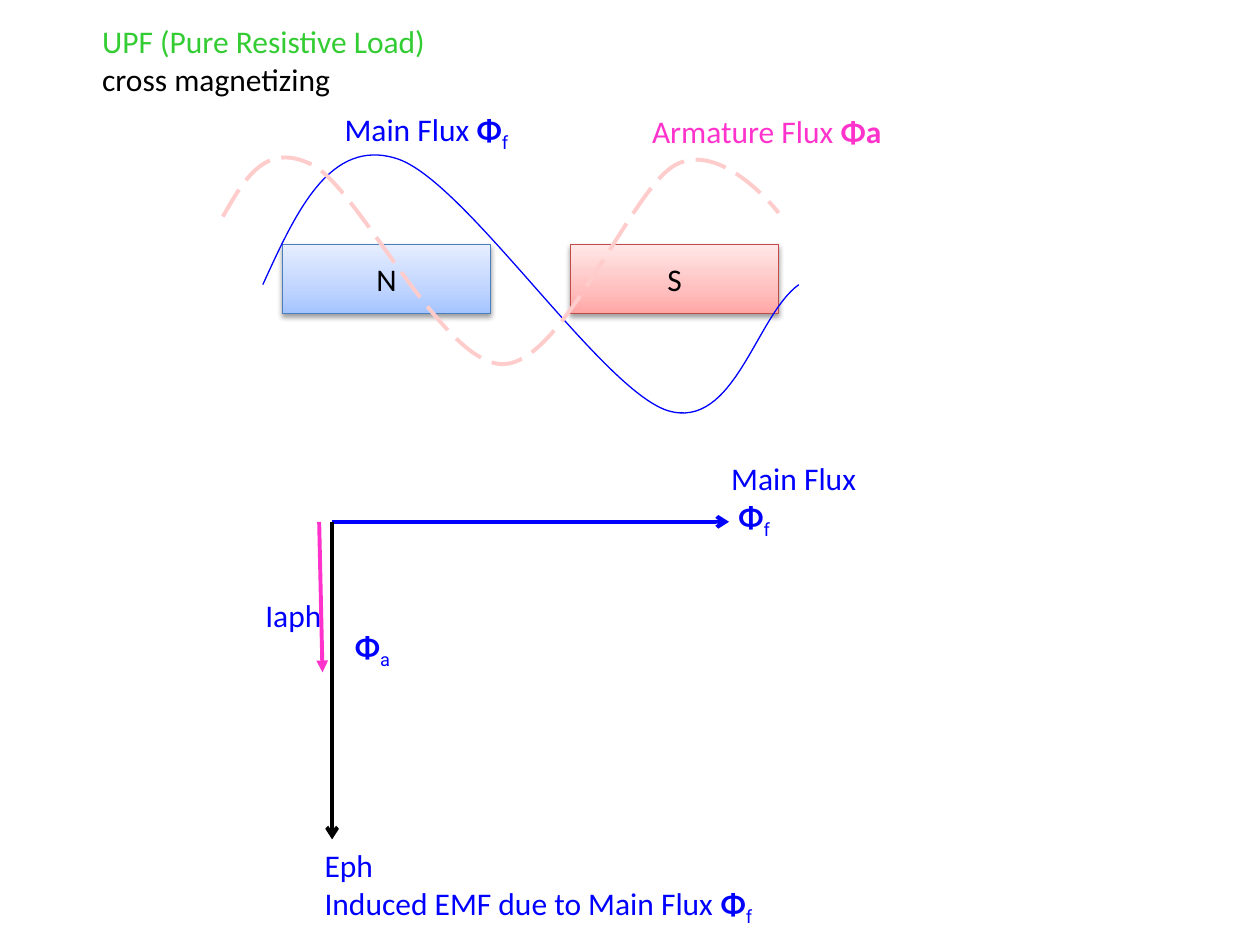
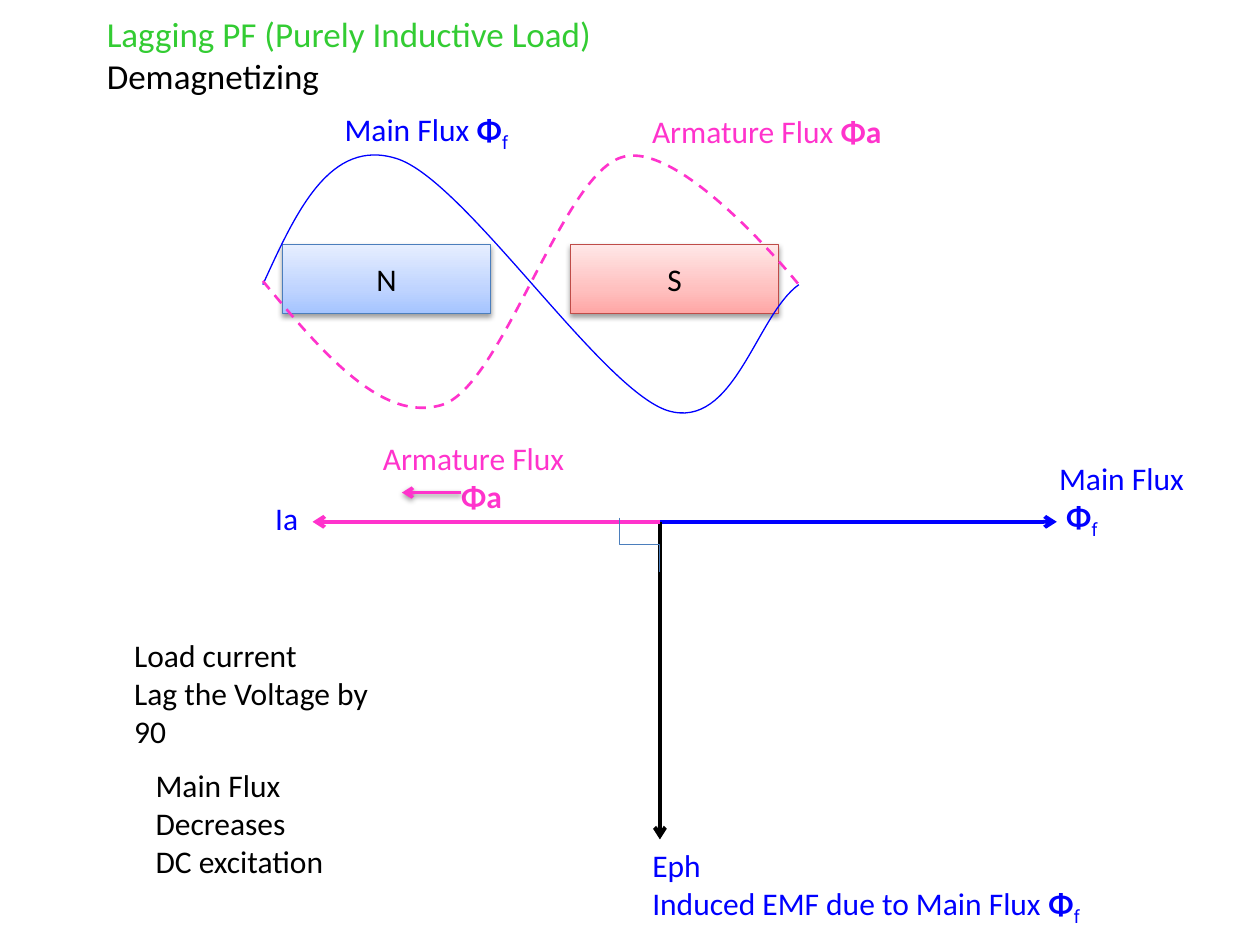
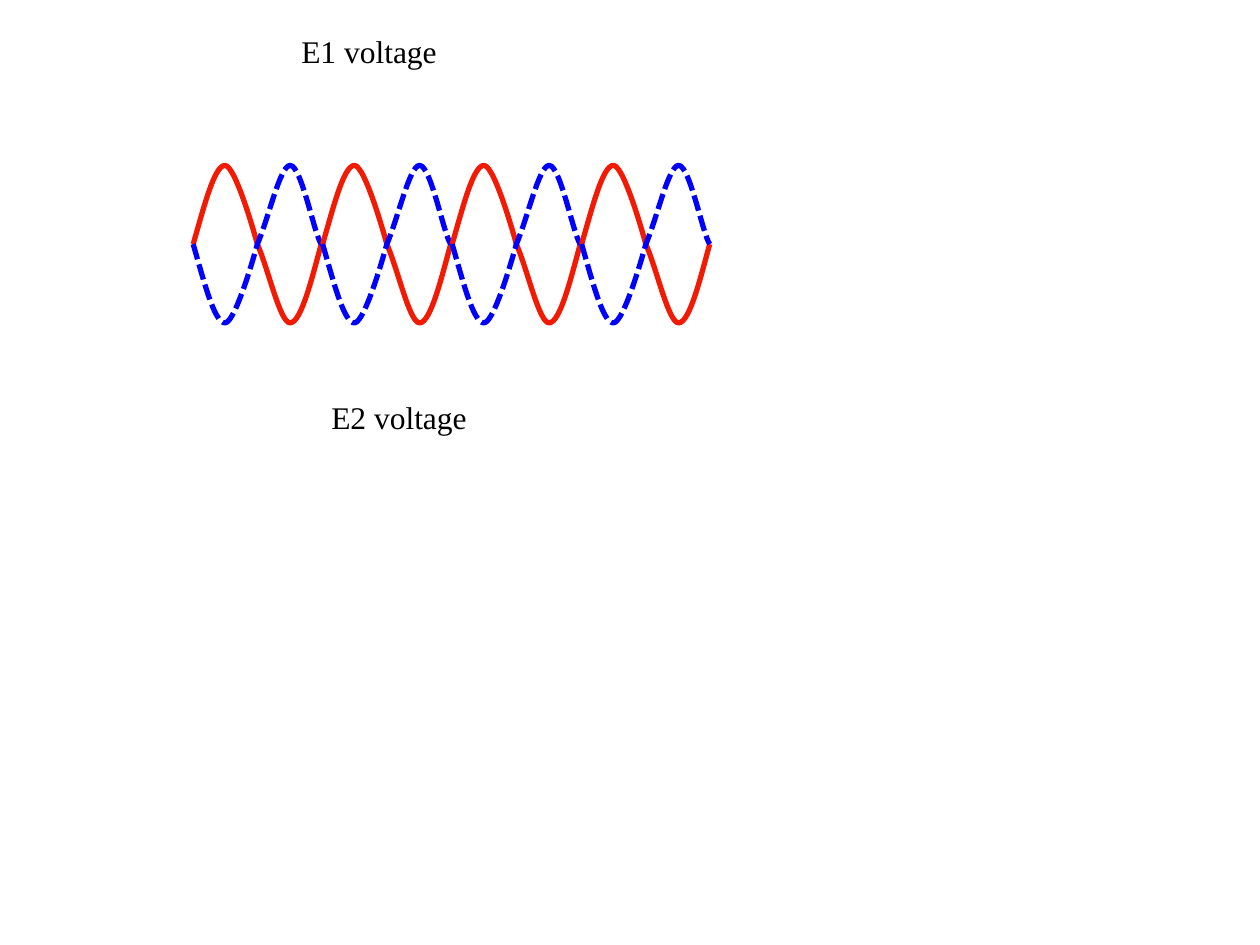
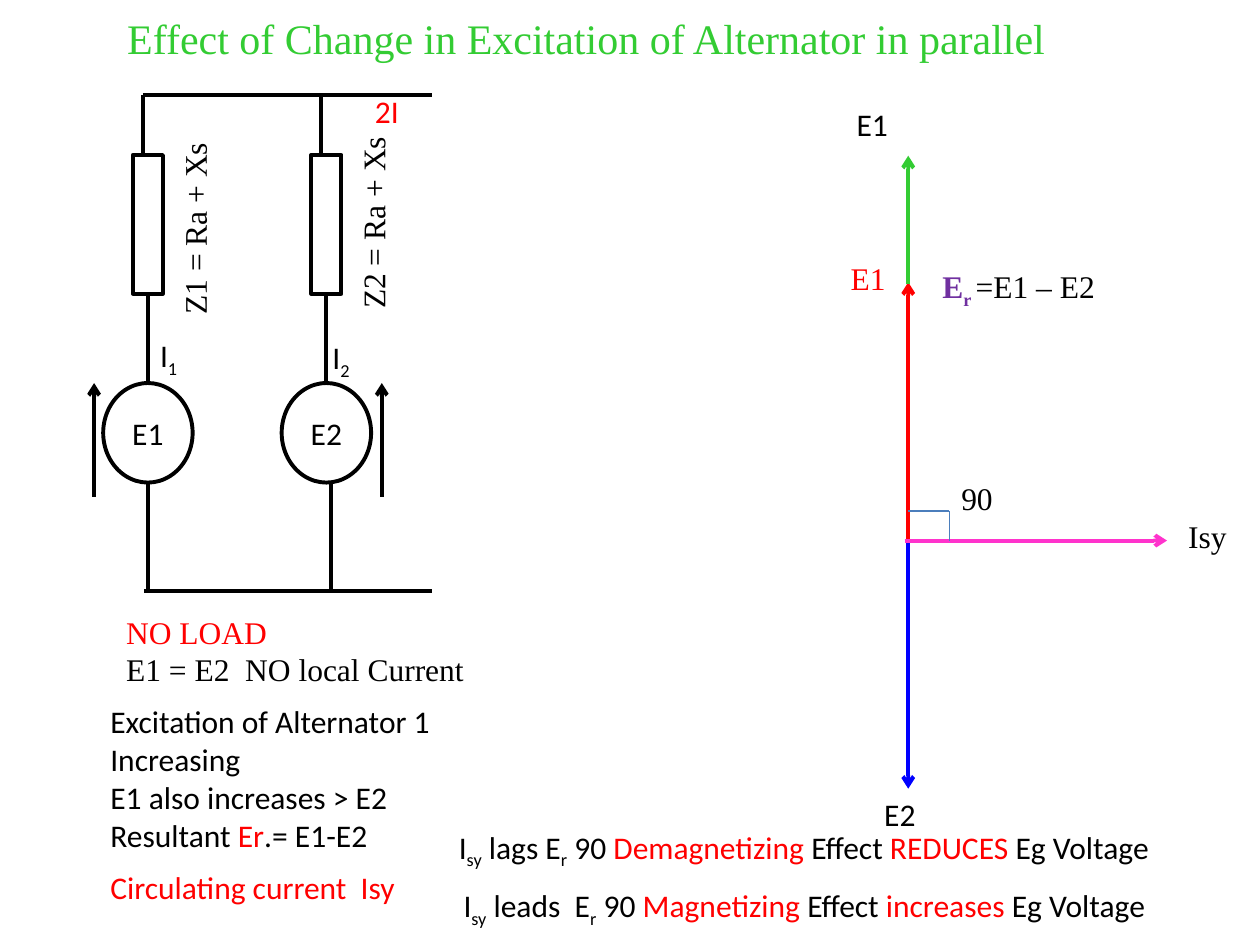
from copy import deepcopy

from lxml import etree
from pptx import Presentation
from pptx.dml.color import RGBColor
from pptx.enum.dml import MSO_LINE
from pptx.enum.shapes import MSO_CONNECTOR, MSO_SHAPE
from pptx.enum.text import MSO_ANCHOR, MSO_AUTO_SIZE, PP_ALIGN
from pptx.oxml.ns import qn
from pptx.util import Pt

STRAIGHT, ELBOW = MSO_CONNECTOR.STRAIGHT, MSO_CONNECTOR.ELBOW
RECTANGLE, CIRCLE = MSO_SHAPE.RECTANGLE, MSO_SHAPE.FLOWCHART_CONNECTOR
DASH, LONG_DASH, SHORT_DASH = MSO_LINE.DASH, MSO_LINE.LONG_DASH, MSO_LINE.SQUARE_DOT
LEFT, CENTER = PP_ALIGN.LEFT, PP_ALIGN.CENTER
TOP, MIDDLE = MSO_ANCHOR.TOP, MSO_ANCHOR.MIDDLE
GROW = MSO_AUTO_SIZE.SHAPE_TO_FIT_TEXT
TITLE_ONLY, BLANK = 5, 6
TOP_SIDE, BOTTOM_SIDE = 0, 2

BLACK = RGBColor(0x00, 0x00, 0x00)
WHITE = RGBColor(0xFF, 0xFF, 0xFF)
BLUE = RGBColor(0x00, 0x00, 0xFF)
RED = RGBColor(0xFF, 0x00, 0x00)
GREEN = RGBColor(0x33, 0xCC, 0x33)
PINK = RGBColor(0xFF, 0x33, 0xCC)
PALE_PINK = RGBColor(0xFF, 0xCC, 0xCC)
PURPLE = RGBColor(0x70, 0x30, 0xA0)
WAVE_RED = RGBColor(0xF3, 0x1A, 0x03)
NORTH_EDGE = RGBColor(0x4B, 0x7E, 0xBC)
SOUTH_EDGE = RGBColor(0xBF, 0x4C, 0x48)
NORTH_FILL = [RGBColor(0xA4, 0xC4, 0xFF), RGBColor(0xBF, 0xD4, 0xFF), RGBColor(0xE6, 0xEE, 0xFF)]
SOUTH_FILL = [RGBColor(0xFF, 0xA6, 0xA5), RGBColor(0xFF, 0xC0, 0xBF), RGBColor(0xFF, 0xE7, 0xE7)]
GRADIENT_STOPS = (0, 0.35, 1)

SANS, SERIF, SUBSCRIPT_FONT = "Calibri", "Times New Roman", "Roboto"
THICK, THIN = 2.25, 0.75


def sub(text, **style):
    return text, {"lowered": True, **style}


def tint(text, color=RED):
    return text, {"color": color}


PHI = ("Φ", {"bold": True})
PHI_F = [PHI, sub("f", font=SUBSCRIPT_FONT)]
PHI_A = [PHI, sub("a", font=SUBSCRIPT_FONT)]
ARMATURE_PHI = ("Φa", {"bold": True})

POLES = [("N", 161.5, NORTH_FILL, NORTH_EDGE), ("S", 326, SOUTH_FILL, SOUTH_EDGE)]
MAIN_FLUX = [
    (150.2, 162.7), (169.2, 121), (188.6, 78.5), (226.8, 90.7), (265.7, 103),
    (343.4, 222.5), (381.6, 234.7), (419.8, 246.2), (432, 180), (456.5, 162.7),
]
CROSS_FLUX = [
    (127.4, 123.8), (139.7, 102.2), (151.9, 80.6), (178.6, 94.3), (205.2, 108),
    (252.7, 208.1), (287.3, 208.1), (321.8, 208.1), (360, 108.7), (385.9, 94.3),
    (412.6, 79.9), (445, 121.7), (445, 121.7),
]
DEMAGNETIZING_FLUX = [
    (150.2, 160.6), (184.3, 201.6), (218.9, 242.6), (253.4, 231.1), (287.3, 218.9),
    (321.1, 100.8), (355, 90), (388.8, 78.5), (456.5, 162.7), (456.5, 162.7),
]
FLUX_LABELS = [
    (189.8, 59.4, 118.8, [["Main Flux ", *PHI_F]], {"color": BLUE}),
    (365.5, 60.4, 150.5, [["Armature Flux ", ARMATURE_PHI]], {"color": PINK}),
]
PHASOR_TOP = 298.2
PHASOR_LABELS = [
    (221, 258.8, 90.7, ["Main Flux", [" ", *PHI_F]], {"color": BLUE}),
    (-11.4, 479.9, 268.6, ["Eph", ["Induced EMF due to Main Flux ", *PHI_F]], {"color": BLUE}),
]
RESISTIVE_LABELS = [
    (144.5, 337, 46.8, ["Iaph"], {"color": BLUE}),
    (191.7, 355, 40.3, [[" ", *PHI_A]], {"color": BLUE}),
]
INDUCTIVE_LABELS = [
    (150.2, 281.5, 28.8, ["Ia"], {"color": BLUE}),
    (211.7, 247.4, 126.7, ["Armature Flux", [ARMATURE_PHI]],
     {"color": PINK, "indents": (0, 44.8)}),
    (69.6, 360, 151.9, ["Load current", "Lag the Voltage by", "90"], {}),
    (81.8, 434.2, 115.9, ["Main Flux", "Decreases", "DC excitation"], {}),
]

WAVE_LEFT, WAVE_AXIS, WAVE_STEP, WAVE_COUNT = 110.4, 139.5, 74, 4
WAVE_SHAPE = [
    (0, 0), (6.5, 22.5), (12.2, 45), (18.2, 45), (24.5, 45), (36.7, 0), (36.7, 0),
    (43.2, -15), (49.7, -45), (55.4, -45), (61.9, -45),
]
WAVE_END = 73.2
WAVES = [(WAVE_RED, -1, (68.4, -17.3), None), (BLUE, 1, (69.1, -5.8), SHORT_DASH)]
VOLTAGE_LABELS = [
    (165.1, 14.8, 92.9, ["E1 voltage"], {"font": SERIF}),
    (182.2, 223.9, 92.9, ["E2 voltage"], {"font": SERIF}),
]

AXIS, ORIGIN = 519, 308.9
PHASORS = [
    (AXIS, ORIGIN, AXIS, 161.3, RED),
    (AXIS, ORIGIN, AXIS, 450.7, BLUE),
    (AXIS, 162, AXIS, 89, GREEN),
    (517, ORIGIN, 666.9, ORIGIN, PINK),
]
RIGHT_ANGLE = [(AXIS, 292, 542.4, 292), (542.4, 292, 542.4, ORIGIN)]
BUS_TOP, BUS_BOTTOM, BUS_RIGHT = 54.4, 337.7, 247
BUSES = [(81.7, BUS_TOP, BUS_RIGHT, BUS_TOP), (82.3, BUS_BOTTOM, BUS_RIGHT, BUS_BOTTOM)]
RESISTOR_TOP, RESISTOR_WIDTH, RESISTOR_HEIGHT = 88.6, 17.3, 79.2
MACHINE_TOP, MACHINE_WIDTH, MACHINE_HEIGHT = 218.9, 51.1, 56.9
BRANCHES = [
    {"name": "E1", "center": 84.5, "feed": 81.7, "return": 84.5, "arrow": 53.8},
    {"name": "E2", "center": 186.5, "feed": 183.6, "return": 189.3, "arrow": 218.2},
]
CIRCUIT_LABELS = [
    (479, 144.7, 34.6, ["E1"], {"font": SERIF, "color": RED, "edge": THIN}),
    (498.2, 450.7, 34.6, ["E2"], {}),
    (65, 346.6, 209.5, [[tint("NO LOAD")], "E1 = E2  NO local Current"], {"font": SERIF}),
    (56, 397.7, 228.2,
     ["Excitation of Alternator 1", "Increasing", "E1 also increases > E2",
      ["Resultant ", tint("Er"), ".= E1-E2"]], {"wrap": True}),
    (482.4, 56.6, 34.6, ["E1"], {}),
    (531.4, 149, 103.7,
     [[("E", {"color": PURPLE, "bold": True}), sub("r ", color=PURPLE, bold=True), "=E1 – E2"]],
     {"font": SERIF}),
    (671.8, 292, 36.7, ["Isy"], {"font": SERIF}),
    (542.2, 270, 32.4, ["90"], {"font": SERIF}),
    (96.7, 80.4, 36, ["Z1 = Ra + Xs"], {"font": SERIF, "edge": THICK, "upright": 106.6}),
    (198.7, 77, 36, ["Z2 = Ra + Xs"], {"font": SERIF, "edge": THICK, "upright": 106.6}),
    (84.4, 188.6, 26.6, [["I", sub("1")]], {}),
    (182.9, 189.8, 26.6, [["I", sub("2")]], {}),
    (207.1, 49, 29.5, ["2I"], {"color": RED}),
    (56, 492.5, 183.6, ["Circulating current  Isy"], {"color": RED}),
    (255.1, 469.4, 447.8,
     [["I", sub("sy"), " lags E", sub("r"), " 90 ", tint("Demagnetizing"), " Effect ",
       tint("REDUCES "), "Eg Voltage"]], {}),
    (257.8, 502.6, 424.8,
     [["I", sub("sy"), " leads  E", sub("r"), " 90 ", tint("Magnetizing"), " Effect ",
       tint("increases"), " Eg Voltage"]], {}),
]


def write(frame, paragraphs, font=SANS, size=18, color=BLACK, align=LEFT, anchor=TOP,
          wrap=False, indents=()):
    frame.word_wrap = wrap
    frame.vertical_anchor = anchor
    for index, content in enumerate(paragraphs):
        para = frame.add_paragraph() if index else frame.paragraphs[0]
        para.alignment = align
        if index < len(indents) and indents[index]:
            para._p.get_or_add_pPr().set("marL", str(Pt(indents[index])))
        for piece in [content] if isinstance(content, str) else content:
            text, style = (piece, {}) if isinstance(piece, str) else piece
            span = para.add_run()
            span.text = text
            span.font.name = style.get("font", font)
            span.font.size = Pt(size)
            span.font.bold = style.get("bold", False)
            span.font.color.rgb = style.get("color", color)
            if style.get("lowered"):
                span._r.get_or_add_rPr().set("baseline", "-25000")


def add_label(page, left, top, width, paragraphs, edge=None, upright=None, **style):
    height = upright or 7.2 + 21.6 * len(paragraphs)
    box = page.shapes.add_textbox(Pt(left), Pt(top), Pt(width), Pt(height))
    write(box.text_frame, paragraphs, **style)
    box.text_frame.auto_size = GROW
    if upright:
        box.text_frame._txBody.bodyPr.set("vert", "vert270")
    if edge:
        set_line(box, WHITE, edge)


def add_labels(page, labels, shift=0):
    for left, top, width, paragraphs, style in labels:
        add_label(page, left + shift, top, width, paragraphs, **style)


def add_page(deck, title=None, left=0, top=0, width=0, size=18, **style):
    page = deck.slides.add_slide(deck.slide_layouts[TITLE_ONLY if title else BLANK])
    if title:
        box = page.shapes.title
        box.left, box.top, box.width = Pt(left), Pt(top), Pt(width)
        box.height = Pt(7.2 + 1.2 * size * len(title))
        write(box.text_frame, title, size=size, **style)
        box.text_frame.auto_size = GROW
    return page


def set_line(shape, color, width, dash=None):
    shape.line.color.rgb = color
    shape.line.width = Pt(width)
    if dash:
        shape.line.dash_style = dash


def add_shadow(effects):
    shadow = etree.SubElement(effects, qn("a:outerShdw"), blurRad=str(Pt(3.1)),
                              dist=str(Pt(1.6)), dir="5400000", rotWithShape="0")
    color = etree.SubElement(shadow, qn("a:srgbClr"), val=str(BLACK))
    etree.SubElement(color, qn("a:alpha"), val="38000")


def add_wire(page, x1, y1, x2, y2, color=BLACK, width=THICK, head=None, shadow=False,
             kind=STRAIGHT):
    wire = page.shapes.add_connector(kind, Pt(x1), Pt(y1), Pt(x2), Pt(y2))
    set_line(wire, color, width)
    if head:
        etree.SubElement(wire.line._get_or_add_ln(), qn("a:tailEnd"), type=head)
    effects = etree.SubElement(wire._element.spPr, qn("a:effectLst"))
    if shadow:
        add_shadow(effects)
    return wire


def add_block(page, kind, left, top, width, height, edge, thickness, text=None):
    block = page.shapes.add_shape(kind, Pt(left), Pt(top), Pt(width), Pt(height))
    block.shadow.inherit = False
    block.fill.solid()
    block.fill.fore_color.rgb = WHITE
    set_line(block, edge, thickness)
    if text:
        write(block.text_frame, [text], align=CENTER, anchor=MIDDLE)
    return block


def curve_range(values, steps=50):
    reached = [values[0]]
    for index in range(0, len(values) - 1, 3):
        a, b, c, d = values[index:index + 4]
        for step in range(1, steps + 1):
            t = step / steps
            reached.append(a * (1 - t) ** 3 + 3 * b * t * (1 - t) ** 2
                           + 3 * c * t * t * (1 - t) + d * t ** 3)
    return Pt(min(reached)), Pt(max(reached))


def add_curve(page, points, color, width, dash=None):
    left, right = curve_range([x for x, y in points])
    top, bottom = curve_range([y for x, y in points])
    builder = page.shapes.build_freeform(left, top)
    builder.add_line_segments([(right, bottom)], close=False)
    curve = builder.convert_to_shape()
    outline = curve._element.spPr.find(".//" + qn("a:pathLst"))[0]
    for command in list(outline):
        outline.remove(command)
    for index, (x, y) in enumerate(points):
        if index == 0:
            command = etree.SubElement(outline, qn("a:moveTo"))
        elif index % 3 == 1:
            command = etree.SubElement(outline, qn("a:cubicBezTo"))
        etree.SubElement(command, qn("a:pt"), x=str(Pt(x) - left), y=str(Pt(y) - top))
    curve.shadow.inherit = False
    curve.fill.background()
    set_line(curve, color, width, dash)


def add_flux_diagram(page, armature, color, width, dash):
    for name, left, colors, edge in POLES:
        pole = add_block(page, RECTANGLE, left, 139.7, 118.8, 39.6, edge, THIN, name)
        pole.fill.gradient()
        pole.fill.gradient_angle = 90
        stop_list = pole._element.spPr.find(".//" + qn("a:gsLst"))
        stop_list.append(deepcopy(stop_list[0]))
        for stop, place, shade in zip(pole.fill.gradient_stops, GRADIENT_STOPS, colors):
            stop.position = place
            stop.color.rgb = shade
        add_shadow(pole._element.spPr.find(qn("a:effectLst")))
    add_curve(page, MAIN_FLUX, BLUE, THIN)
    add_curve(page, armature, color, width, dash)
    add_labels(page, FLUX_LABELS)


def add_flux_phasors(page, left):
    add_wire(page, left, PHASOR_TOP, left + 226.8, PHASOR_TOP, BLUE, head="arrow")
    add_wire(page, left, PHASOR_TOP, left, 479.7, head="arrow")
    add_labels(page, PHASOR_LABELS, left)


def build_resistive(deck):
    page = add_page(deck, [[tint("UPF (Pure Resistive Load)", GREEN)], "cross magnetizing"],
                    51.2, 9, 211)
    add_flux_diagram(page, CROSS_FLUX, PALE_PINK, 2.25, LONG_DASH)
    add_flux_phasors(page, 189.8)
    add_labels(page, RESISTIVE_LABELS)
    add_wire(page, 182.4, PHASOR_TOP, 184.3, 384.2, PINK, head="triangle")


def build_inductive(deck):
    page = add_page(deck, [[tint("Lagging PF (Purely Inductive Load)", GREEN)], "Demagnetizing"],
                    53.8, 3.6, 308.2, size=20)
    add_flux_diagram(page, DEMAGNETIZING_FLUX, PINK, 1.5, DASH)
    add_flux_phasors(page, 377.1)
    add_wire(page, 377.1, PHASOR_TOP, 178.6, PHASOR_TOP, PINK, head="arrow")
    add_labels(page, INDUCTIVE_LABELS)
    add_wire(page, 263.5, 281.5, 229.7, 281.5, PINK, 2, head="arrow", shadow=True)
    corner = add_wire(page, 350, 299.9, 380.9, 322.6, NORTH_EDGE, THIN, kind=ELBOW)
    frame = corner._element.spPr.find(qn("a:xfrm"))
    frame.set("rot", "16200000")
    frame.set("flipH", "1")


def build_voltages(deck):
    page = add_page(deck)
    for cycle in range(WAVE_COUNT):
        left = WAVE_LEFT + cycle * WAVE_STEP
        for color, sign, last_handle, dash in WAVES:
            points = [(left + x, WAVE_AXIS + sign * y)
                      for x, y in [*WAVE_SHAPE, last_handle, (WAVE_END, 0)]]
            add_curve(page, points, color, 3, dash)
    add_labels(page, VOLTAGE_LABELS)


def build_excitation(deck):
    page = add_page(deck, ["Effect of Change in Excitation of Alternator in parallel"],
                    65.5, 3.6, 549.4, size=24, font=SERIF, color=GREEN)
    for *ends, color in PHASORS:
        add_wire(page, *ends, color, head="arrow")
    for ends in RIGHT_ANGLE:
        add_wire(page, *ends, NORTH_EDGE, THIN)
    for ends in BUSES:
        add_wire(page, *ends)
    machine_bottom = MACHINE_TOP + MACHINE_HEIGHT
    for branch in BRANCHES:
        center = branch["center"]
        resistor = add_block(page, RECTANGLE, center - RESISTOR_WIDTH / 2, RESISTOR_TOP,
                             RESISTOR_WIDTH, RESISTOR_HEIGHT, BLACK, THICK)
        machine = add_block(page, CIRCLE, center - MACHINE_WIDTH / 2, MACHINE_TOP,
                            MACHINE_WIDTH, MACHINE_HEIGHT, BLACK, THICK, branch["name"])
        link = add_wire(page, center, RESISTOR_TOP + RESISTOR_HEIGHT, center, MACHINE_TOP)
        link.begin_connect(resistor, BOTTOM_SIDE)
        link.end_connect(machine, TOP_SIDE)
        add_wire(page, branch["feed"], BUS_TOP, branch["feed"], RESISTOR_TOP)
        add_wire(page, branch["return"], machine_bottom, branch["return"], BUS_BOTTOM)
        add_wire(page, branch["arrow"], 284, branch["arrow"], MACHINE_TOP, head="arrow")
    add_labels(page, CIRCUIT_LABELS)


def main():
    deck = Presentation()
    deck.slide_width, deck.slide_height = Pt(720), Pt(540)
    build_resistive(deck)
    build_inductive(deck)
    build_voltages(deck)
    build_excitation(deck)
    deck.save("out.pptx")


if __name__ == "__main__":
    main()
